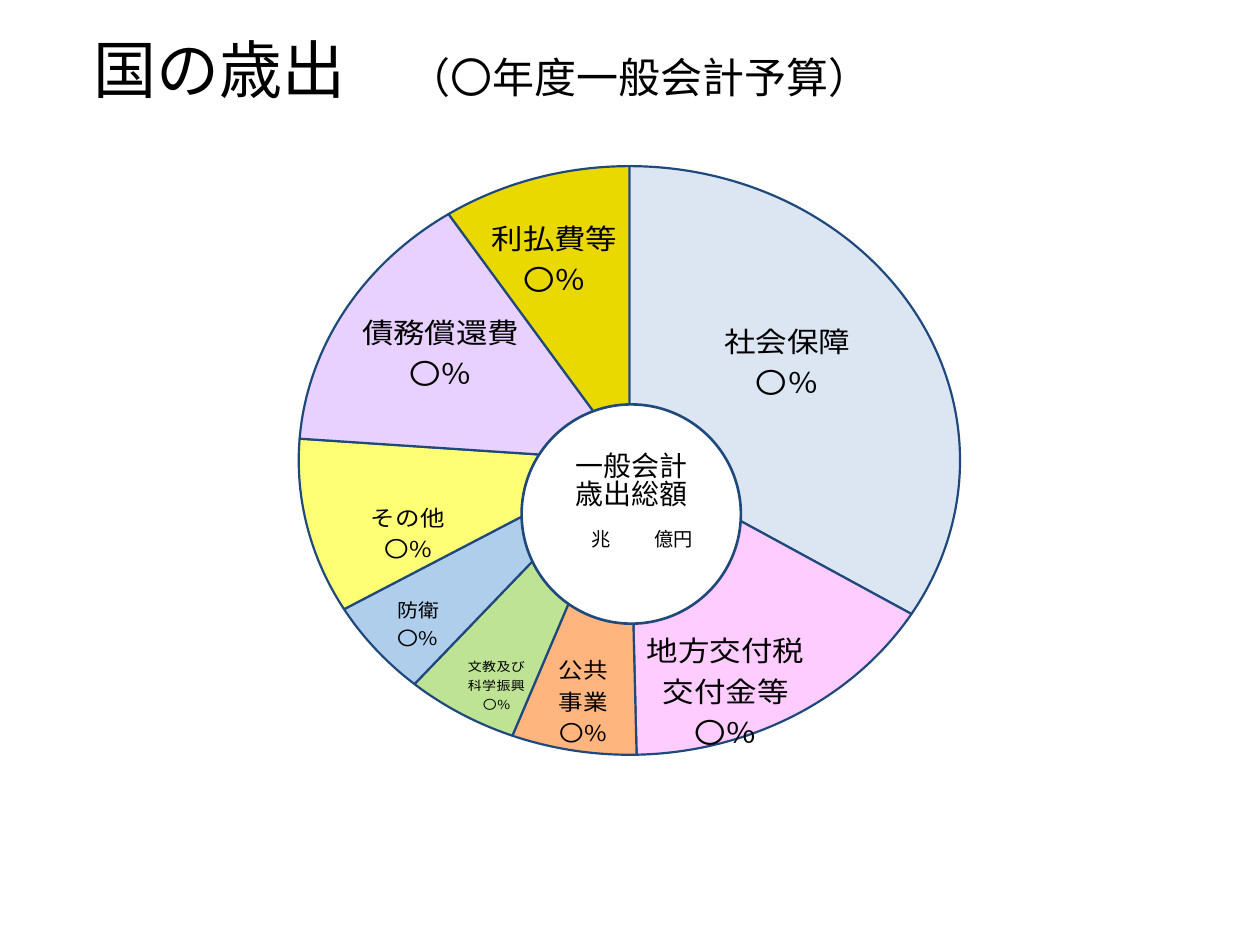
from itertools import accumulate
from math import cos, copysign, pi, sin

from lxml.etree import SubElement
from pptx import Presentation
from pptx.chart.data import CategoryChartData
from pptx.dml.color import RGBColor
from pptx.enum.chart import XL_CHART_TYPE as ChartType, XL_LABEL_POSITION as LabelPos
from pptx.enum.shapes import MSO_SHAPE as Shape
from pptx.enum.text import MSO_ANCHOR as Anchor, PP_ALIGN as Align
from pptx.oxml.ns import qn
from pptx.util import Inches, Pt

# Chart frame and plot area: left, top, width, height
FRAME = (0.69, 0.4, 8.62, 6.36)
PLOT = (0.195, 0.162, 0.609, 0.826)
LABEL_GAP = 0.06
LINE_HEIGHT = 1.45

# Category, share, colour, label, size, label centre in inches
SPENDING = [
    ("社会保障", 33.7, "DCE6F2", "社会保障\n〇％", 18, (6.25, 3.17)),
    ("地方交付税\n交付金等", 15.9, "FFCCFF", "地方交付税\n交付金等\n〇％", 18, (5.76, 6.1)),
    ("公共\n事業", 6.1, "FFB57D", "公共\n事業\n〇%", 14, (4.63, 6.2)),
    ("文教及び\n科学振興", 5.5, "BEE395", "文教及び\n科学振興\n〇%", 8, (3.95, 6.05)),
    ("防衛", 5.3, "AFCEEB", "防衛　\n〇%　", 12, (3.4, 5.5)),
    ("その他", 9.6, "FFFF75", "その他\n〇%", 14, (3.24, 4.7)),
    ("債務償還費", 14.6, "E8D1FF", "債務償還費\n〇％", 18, (3.5, 3.09)),
    ("利払費等", 9.2, "EAD900", "利払費等\n〇％", 18, (4.4, 2.25)),
]


def color(value):
    return RGBColor.from_string(value)


def add_layout(parent, index, **values):
    """Give a chart part a manual layout, in fractions of the chart."""
    for old in parent.findall(qn("c:layout")):
        parent.remove(old)
    layout = SubElement(parent, qn("c:layout"))
    parent.insert(index, layout)
    manual = SubElement(layout, qn("c:manualLayout"))
    for tag, value in values.items():
        SubElement(manual, qn(f"c:{tag}")).set("val", str(value))


def label_offset(angle, text, size, target):
    """Distance from a slice's outside label position to its target centre."""
    left, top, width, height = FRAME
    radius = PLOT[2] * width / 2
    middle_x = left + (PLOT[0] + PLOT[2] / 2) * width
    middle_y = top + (PLOT[1] + PLOT[3] / 2) * height
    lines = text.split("\n")
    half_w = max(map(len, lines)) * size / 72 / 2
    half_h = len(lines) * size * LINE_HEIGHT / 72 / 2
    reach = radius + LABEL_GAP
    x = middle_x + reach * sin(angle) + copysign(half_w, sin(angle))
    y = middle_y - reach * cos(angle) - copysign(half_h, cos(angle))
    return round((target[0] - x) / width, 3), round((target[1] - y) / height, 3)


class BudgetSlide:
    FONT = "Noto Sans CJK JP"
    INK = "000000"
    OUTLINE = "1F497D"

    def __init__(self, deck):
        self.slide = deck.slides.add_slide(deck.slide_layouts[5])

    def style(self, font, size):
        font.name = self.FONT
        font.size = Pt(size)
        font.color.rgb = color(self.INK)
        east_asian = SubElement(font._element, qn("a:ea"))
        east_asian.set("typeface", self.FONT)

    def outline(self, line, width):
        line.color.rgb = color(self.OUTLINE)
        line.width = Pt(width)

    def title(self, parts, box):
        heading = self.slide.shapes.title
        heading.left, heading.top, heading.width, heading.height = map(Inches, box)
        heading.text_frame.vertical_anchor = Anchor.MIDDLE
        line = heading.text_frame.paragraphs[0]
        line.alignment = Align.LEFT
        for text, size in parts:
            run = line.add_run()
            run.text = text
            self.style(run.font, size)

    def pie(self, rows):
        categories, shares, *_ = zip(*rows)
        data = CategoryChartData()
        data.categories = categories
        data.add_series("Series 1", shares)
        chart = self.slide.shapes.add_chart(
            ChartType.PIE, *map(Inches, FRAME), data).chart
        chart.has_title = chart.has_legend = False
        chart.font.name = "Calibri"
        chart.font.size = Pt(18)
        chart.font.color.rgb = color(self.INK)
        plot = chart.plots[0]
        plot.vary_by_categories = True
        plot_area = chart._chartSpace.chart.plotArea
        add_layout(plot_area, 0, layoutTarget="inner", xMode="edge", yMode="edge",
                   **dict(zip("xywh", PLOT)))

        spending = plot.series[0]
        labels = spending.data_labels
        labels.show_percentage = labels.show_category_name = True
        labels.show_value = False
        labels.number_format = "0.0%"
        labels.number_format_is_linked = False
        ends = list(accumulate(shares))
        for i, (_, share, fill, text, size, target) in enumerate(rows):
            point = spending.points[i]
            point.format.fill.solid()
            point.format.fill.fore_color.rgb = color(fill)
            self.outline(point.format.line, 1.25)
            angle = 2 * pi * (ends[i] - share / 2) / ends[-1]
            self.slice_label(point.data_label, text, size,
                             label_offset(angle, text, size, target))

    def slice_label(self, label, text, size, offset):
        label.text_frame.text = text
        for line in label.text_frame.paragraphs:
            for run in line.runs:
                self.style(run.font, size)
        label.position = LabelPos.BEST_FIT
        add_layout(label._get_or_add_dLbl(), 1, x=offset[0], y=offset[1])

    def total(self, lines, box):
        hub = self.slide.shapes.add_shape(Shape.OVAL, *map(Inches, box))
        hub.shadow.inherit = False
        hub.fill.solid()
        hub.fill.fore_color.rgb = color("FFFFFF")
        self.outline(hub.line, 1.5)
        frame = hub.text_frame
        frame.word_wrap = True
        frame.vertical_anchor = Anchor.MIDDLE
        frame.margin_left = frame.margin_right = 0
        frame.margin_top, frame.margin_bottom = Inches(0.04), Inches(0.23)
        frame.text = "\n".join(text for text, _ in lines)
        for line, (_, size) in zip(frame.paragraphs, lines):
            line.alignment = Align.CENTER
            line.line_spacing = 0.85
            self.style(line.font, size)
        # Room for the figures in front of each unit
        amount = frame.paragraphs[-1]
        amount.alignment = Align.LEFT
        amount.space_before = Pt(12)
        props = amount._p.get_or_add_pPr()
        props.set("marL", str(Inches(0.3)))
        props.set("indent", "0")
        stops = SubElement(props, qn("a:tabLst"))
        SubElement(stops, qn("a:tab"), pos=str(Inches(0.92)), algn="l")
        props.append(props.find(qn("a:defRPr")))


def main():
    deck = Presentation()
    deck.slide_width, deck.slide_height = Inches(10), Inches(7.5)
    budget = BudgetSlide(deck)
    # Spending by item, with the total in the middle
    budget.pie(SPENDING)
    budget.total([("一般会計", 16), ("歳出総額", 16), ("兆\t億円", 11)],
                 (4.14, 3.21, 1.74, 1.74))
    # Heading
    budget.title([("国の歳出　", 36), ("（〇年度一般会計予算）", 24)],
                 (0.64, 0.19, 8.77, 0.71))
    deck.save("out.pptx")


if __name__ == "__main__":
    main()
